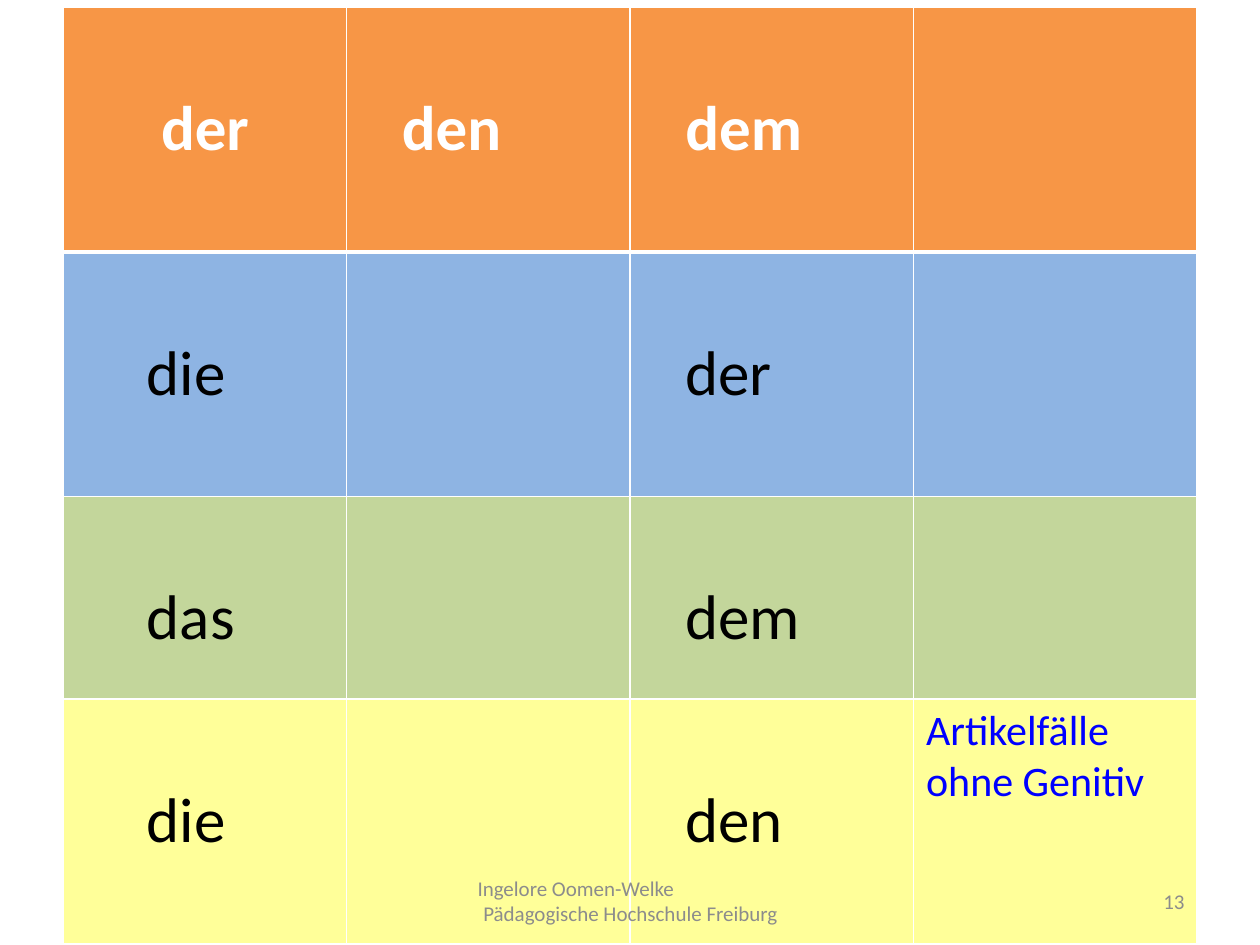
from lxml.etree import SubElement
from pptx import Presentation
from pptx.dml.color import RGBColor
from pptx.enum.text import MSO_ANCHOR, PP_ALIGN
from pptx.oxml.ns import qn
from pptx.util import Inches, Pt

WIDTH, HEIGHT = 10, 7.5
SPACE = 0.113  # width of one indent step in table cells
LINE_ABOVE = 0.66  # distance from a cell's top to its article


def color(hex_string):
    return RGBColor.from_string(hex_string)


def write(paragraph, text, size=36, fill="000000", bold=False,
          align=PP_ALIGN.LEFT, font="Calibri"):
    paragraph.alignment = align
    run = paragraph.add_run()
    run.text = text
    run.font.name, run.font.size, run.font.bold = font, Pt(size), bold
    run.font.color.rgb = color(fill)


class SlideBuilder:
    muted = "8C8C8C"
    border = "FFFFFF"

    def __init__(self, slide):
        self.slide = slide

    def place(self, left, top, width, height):
        """Turn shares of the slide's size into lengths."""
        return (Inches(left * WIDTH), Inches(top * HEIGHT),
                Inches(width * WIDTH), Inches(height * HEIGHT))

    def table(self, box, row_heights, columns):
        frame = self.slide.shapes.add_table(
            len(row_heights), columns, *self.place(*box))
        for row, height in zip(frame.table.rows, row_heights):
            row.height = Inches(height)
        return frame.table

    def cell(self, cell, fill, below=1):
        properties = cell._tc.get_or_add_tcPr()
        for side, points in (("L", 1), ("R", 1), ("T", 1), ("B", below)):
            line = SubElement(properties, qn(f"a:ln{side}"), w=str(Pt(points)))
            solid = SubElement(line, qn("a:solidFill"))
            SubElement(solid, qn("a:srgbClr"), val=self.border)
        cell.fill.solid()
        cell.fill.fore_color.rgb = color(fill)

    def footer(self, box, lines, margin=0.1):
        frame = self.slide.shapes.add_textbox(*self.place(*box)).text_frame
        frame.word_wrap = True
        frame.vertical_anchor = MSO_ANCHOR.MIDDLE
        frame.margin_left = frame.margin_right = Inches(margin)
        for index, (text, align) in enumerate(lines):
            paragraph = frame.add_paragraph() if index else frame.paragraphs[0]
            write(paragraph, text, size=12, fill=self.muted, align=align)


def main():
    deck = Presentation()
    deck.slide_width, deck.slide_height = Inches(WIDTH), Inches(HEIGHT)
    builder = SlideBuilder(deck.slides.add_slide(deck.slide_layouts[6]))

    # Articles by gender and case: row fill, then {column: (indent, article)}
    declension = [
        ("F79646", {0: (6, "der"), 1: (3, "den"), 2: (3, "dem")}),
        ("8EB4E3", {0: (5, "die"), 2: (3, "der")}),
        ("C3D69B", {0: (5, "das"), 2: (3, "dem")}),
        ("FFFF99", {0: (5, "die"), 2: (3, "den")}),
    ]
    articles = builder.table((0.05, 0.008, 0.9, 0.99),
                             [1.94, 1.94, 1.61, 1.94], columns=4)
    for row, (fill, forms) in enumerate(declension):
        header = row == 0
        for column in range(4):
            cell = articles.cell(row, column)
            builder.cell(cell, fill, below=3 if header else 1)
            if column in forms:
                indent, article = forms[column]
                cell.margin_left = Inches(0.1 + indent * SPACE)
                cell.margin_top = Inches(LINE_ABOVE)
                write(cell.text_frame.paragraphs[0], article, bold=header,
                      fill="FFFFFF" if header else "000000")

    # Caption in the last cell
    write(articles.cell(3, 3).text_frame.paragraphs[0],
          "Artikelfälle ohne Genitiv", size=24, fill="0000FF")

    # Author and page number
    builder.footer((0.342, 0.927, 0.317, 0.053),
                   [("Ingelore Oomen-Welke", PP_ALIGN.LEFT),
                    ("Pädagogische Hochschule Freiburg", PP_ALIGN.CENTER)],
                   margin=0.37)
    builder.footer((0.717, 0.927, 0.233, 0.053), [("13", PP_ALIGN.RIGHT)])

    deck.save("out.pptx")


if __name__ == "__main__":
    main()
